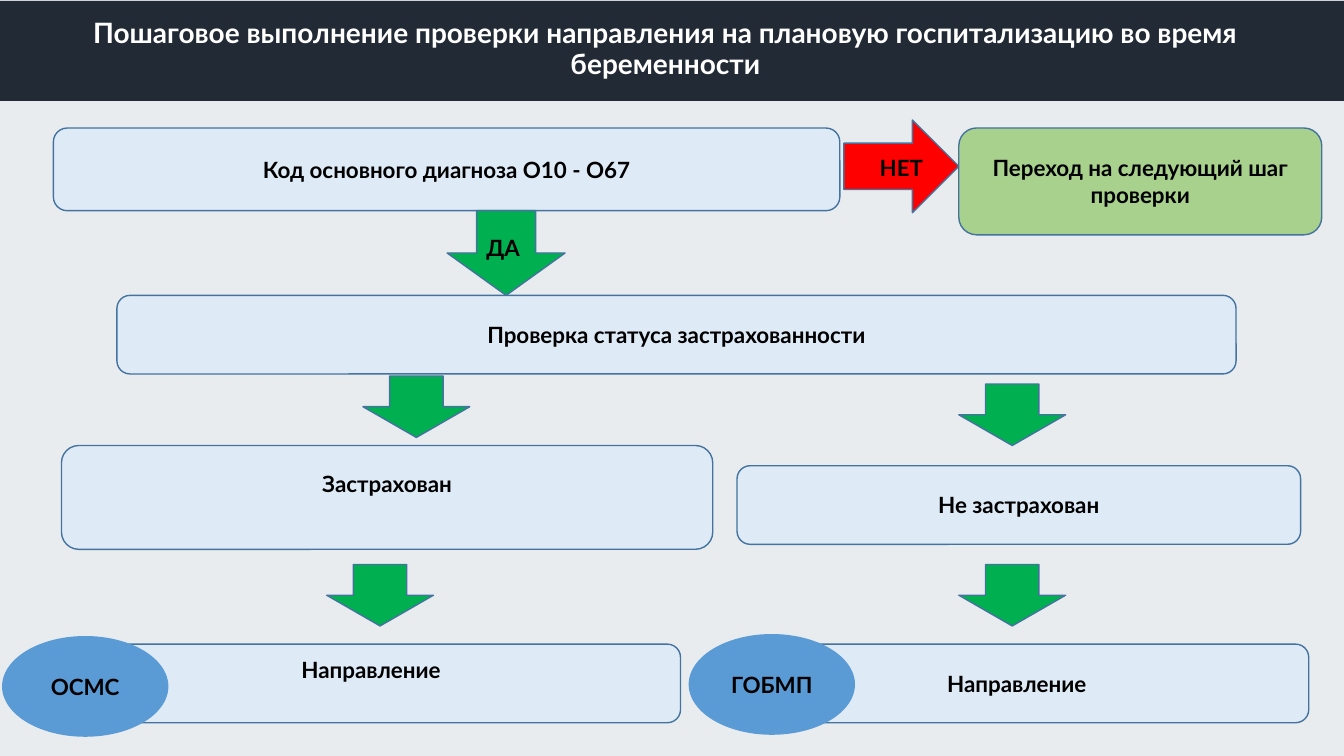
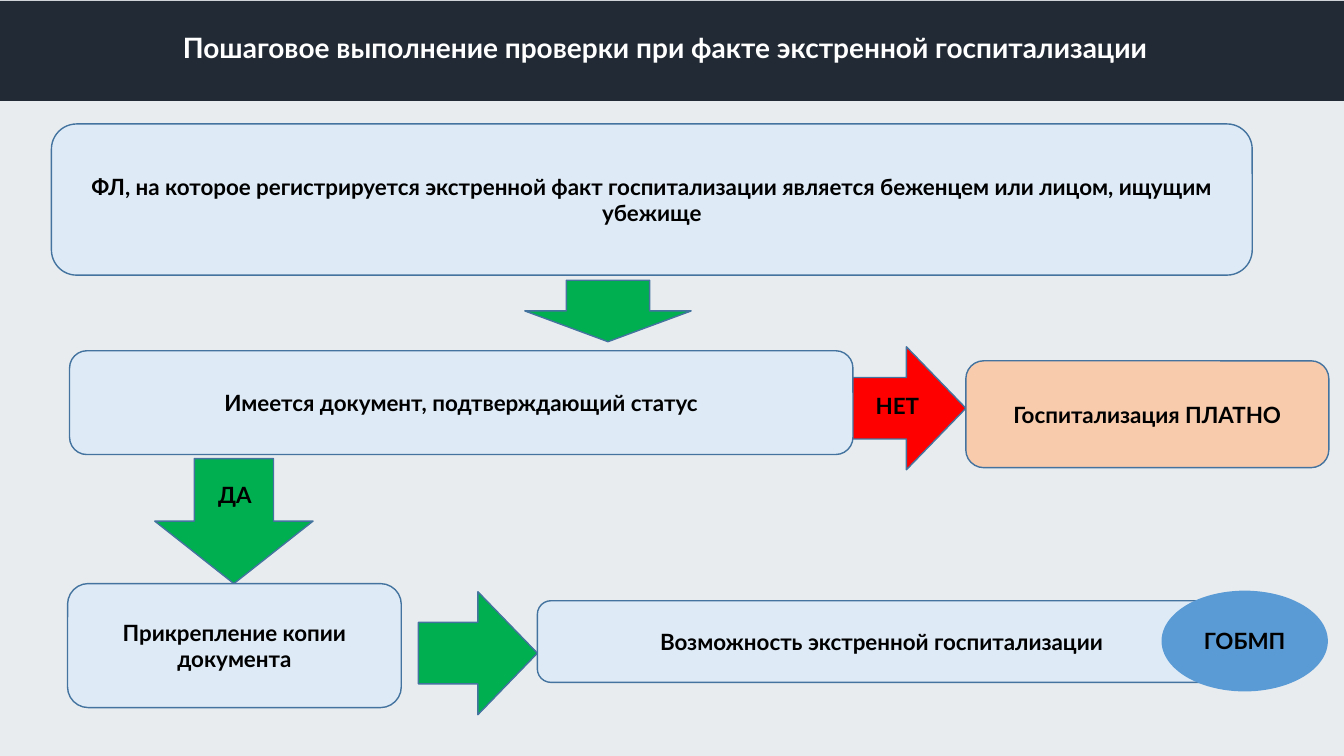
from pptx import Presentation
from pptx.dml.color import RGBColor
from pptx.enum.shapes import MSO_SHAPE
from pptx.enum.text import MSO_ANCHOR, MSO_AUTO_SIZE, PP_ALIGN
from pptx.oxml.ns import qn
from pptx.util import Inches, Pt
from lxml import etree

RECT, ROUND, OVAL = MSO_SHAPE.RECTANGLE, MSO_SHAPE.ROUNDED_RECTANGLE, MSO_SHAPE.OVAL
RIGHT, DOWN = MSO_SHAPE.RIGHT_ARROW, MSO_SHAPE.DOWN_ARROW
MIDDLE, CENTER, FIXED = MSO_ANCHOR.MIDDLE, PP_ALIGN.CENTER, MSO_AUTO_SIZE.NONE

FONT = "Lato"
WIDE, HIGH = 13.33, 7.5
LINE = 0.27  # height of one line of body text
INK = {
    "tint": "2C4A64", "band": "222A35", "white": "FFFFFF", "black": "000000",
    "edge": "43739E", "step": "DEEBF7", "yes": "00B050", "no": "FF0000",
    "next": "A9D18E", "paid": "F8CBAD", "fund": "5B9BD5",
}


def color(name):
    return RGBColor.from_string(INK[name])


def write(shape, text, size=16, ink="black", space=None, lift=0):
    """Write bold centred text; lift raises it by a number of lines."""
    frame = shape.text_frame
    frame.word_wrap = True
    frame.auto_size = FIXED
    frame.vertical_anchor = MIDDLE
    frame.margin_left = frame.margin_right = Inches(0.1)
    frame.margin_top = Inches(0.05)
    frame.margin_bottom = Inches(0.05 + lift * LINE)
    par = frame.paragraphs[0]
    par.alignment = CENTER
    if space:
        par.line_spacing = space
    run = par.add_run()
    run.text = text
    font = run.font
    font.name, font.size, font.bold = FONT, Pt(size), True
    font.color.rgb = color(ink)


def draw(slide, kind, box, fill, edge="edge"):
    shape = slide.shapes.add_shape(kind, *map(Inches, box))
    shape.shadow.inherit = False
    shape.fill.solid()
    shape.fill.fore_color.rgb = color(fill)
    if edge:
        shape.line.color.rgb = color(edge)
        shape.line.width = Pt(1)
    else:
        shape.line.fill.background()
    return shape


def step(slide, text, box, fill="step", lift=0):
    write(draw(slide, ROUND, box, fill), text, lift=lift)


def fund(slide, text, left, top):
    write(draw(slide, OVAL, (left, top, 1.65, 1), "fund", None), text)


def down(slide, mid, top, wide=1.06, high=0.61):
    """Green arrow centred on mid."""
    draw(slide, DOWN, (mid - wide / 2, top, wide, high), "yes")


def label(slide, text, mid, top):
    box = (mid - 0.4, top, 0.8, 0.37)
    write(slide.shapes.add_textbox(*map(Inches, box)), text)


def frame(deck, text):
    """Make a slide with the tinted ground, the dark band and the title."""
    slide = deck.slides.add_slide(deck.slide_layouts[5])
    tint = draw(slide, RECT, (0, 0, WIDE, HIGH), "tint", None)
    shade = tint.fill._xPr.find(qn("a:solidFill"))[0]
    etree.SubElement(shade, qn("a:alpha")).set("val", "10000")
    draw(slide, RECT, (0, 0.01, WIDE, 0.99), "band", None)
    # Title above the band
    title = slide.shapes.title
    slide.shapes._spTree.append(title._element)
    title.left, title.top, title.width, title.height = map(
        Inches, (0, 0.18, 13.2, 0.63))
    write(title, text, size=20, ink="white", space=0.9)
    return slide


def planned(deck):
    slide = frame(deck, "Пошаговое выполнение проверки направления на "
                        "плановую госпитализацию во время беременности")
    # Diagnosis code
    step(slide, "Код основного диагноза О10 - О67", (0.53, 1.27, 7.8, 0.82))
    draw(slide, RIGHT, (8.37, 1.19, 1.14, 0.92), "no")
    label(slide, "НЕТ", 8.94, 1.48)
    step(slide, "Переход на следующий шаг проверки",
         (9.51, 1.27, 3.6, 1.06), "next")
    down(slide, 5.02, 2.09, 1.17, 0.84)
    label(slide, "ДА", 4.99, 2.27)
    # Insurance status
    step(slide, "Проверка статуса застрахованности", (1.16, 2.93, 11.1, 0.78))
    down(slide, 4.13, 3.73)
    down(slide, 10.04, 3.81)
    step(slide, "Застрахован", (0.61, 4.42, 6.46, 1.03), lift=1)
    step(slide, "Не застрахован", (7.31, 4.62, 5.59, 0.78))
    # Referrals and their funds
    for mid in (3.77, 10.04):
        down(slide, mid, 5.6)
    step(slide, "Направление", (0.61, 6.39, 6.14, 0.78), lift=1)
    step(slide, "Направление", (7.19, 6.39, 5.79, 0.78))
    fund(slide, "ОСМС", 0.02, 6.31)
    fund(slide, "ГОБМП", 6.83, 6.29)


def urgent(deck):
    slide = frame(deck, "Пошаговое выполнение проверки при факте "
                        "экстренной госпитализации")
    # Refugee status
    step(slide, "ФЛ, на которое регистрируется экстренной факт госпитализации "
                "является беженцем или лицом, ищущим убежище",
         (0.51, 1.23, 11.91, 1.5))
    down(slide, 6.03, 2.78, 1.65)
    # Proof of status
    draw(slide, RIGHT, (8.4, 3.44, 1.18, 1.22), "no")
    label(slide, "НЕТ", 8.9, 3.84)
    step(slide, "Имеется документ, подтверждающий статус",
         (0.69, 3.48, 7.77, 1.03))
    step(slide, "Госпитализация ПЛАТНО", (9.58, 3.58, 3.6, 1.06), "paid")
    down(slide, 2.32, 4.55, 1.57, 1.24)
    label(slide, "ДА", 2.33, 4.72)
    # Admission
    step(slide, "Прикрепление копии документа", (0.67, 5.79, 3.31, 1.23))
    draw(slide, RIGHT, (4.15, 5.87, 1.18, 1.22), "yes")
    step(slide, "Возможность экстренной госпитализации",
         (5.33, 5.96, 6.83, 0.81))
    fund(slide, "ГОБМП", 11.52, 5.86)


def main():
    deck = Presentation()
    deck.slide_width, deck.slide_height = Inches(WIDE), Inches(HIGH)
    planned(deck)
    urgent(deck)
    deck.save("out.pptx")


if __name__ == "__main__":
    main()
